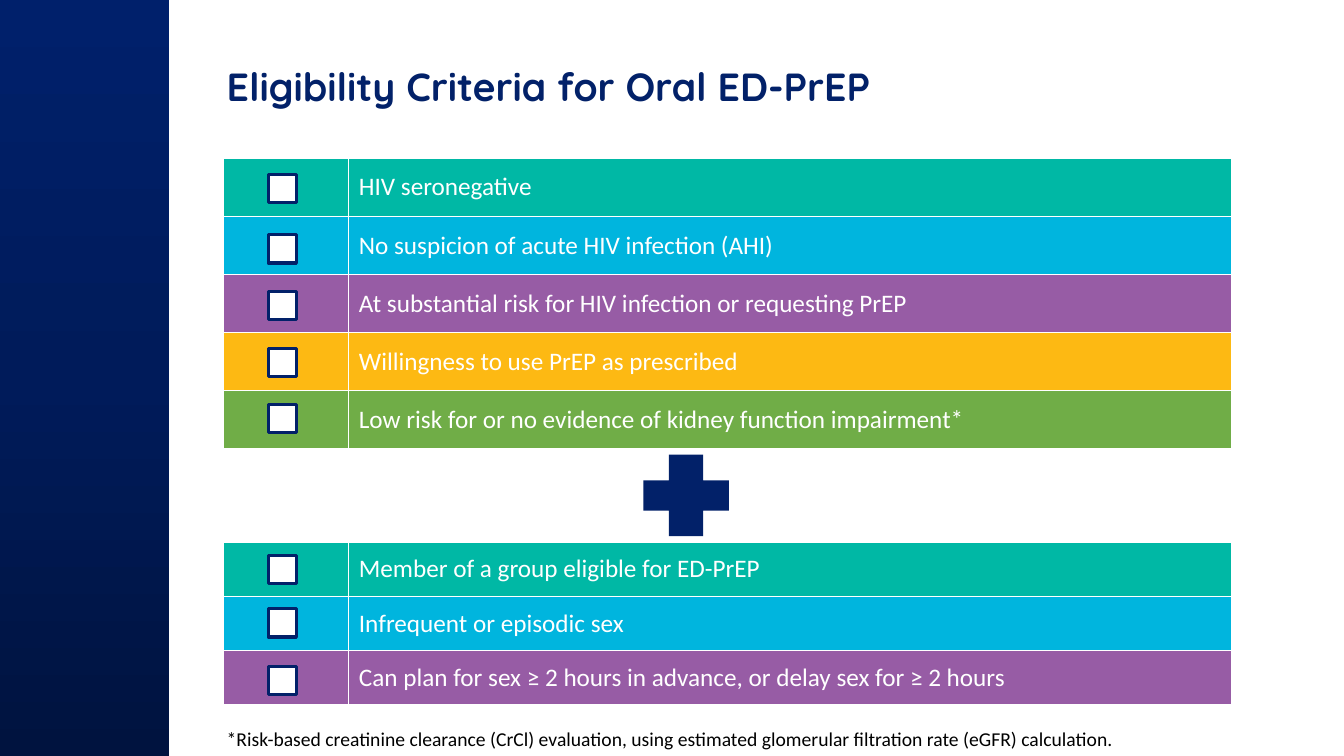
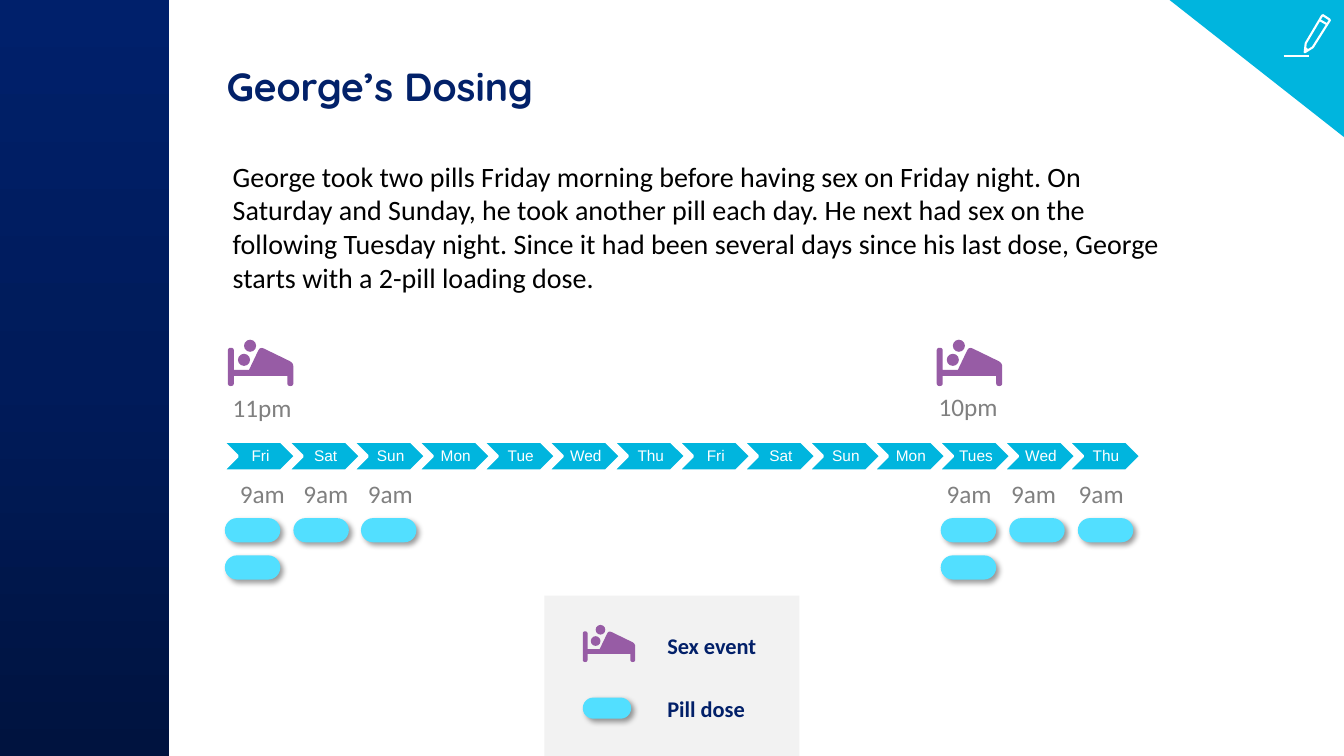
import copy
from dataclasses import dataclass

import pptx
import pptx.dml.color
import pptx.enum.shapes
import pptx.enum.text
import pptx.oxml
import pptx.oxml.ns
import pptx.util

Inches = pptx.util.Inches
Pt = pptx.util.Pt
qn = pptx.oxml.ns.qn
KIND = pptx.enum.shapes.MSO_SHAPE
ALIGN = pptx.enum.text.PP_ALIGN
ANCHOR = pptx.enum.text.MSO_ANCHOR
NS = 'xmlns:a="http://schemas.openxmlformats.org/drawingml/2006/main"'


# Theme: colours, fonts and type sizes
@dataclass(frozen=True)
class Theme:
    navy: str = "022169"
    label: str = "022069"
    white: str = "FFFFFF"
    black: str = "000000"
    gray: str = "808080"
    pale: str = "F2F2F2"
    teal: str = "00B8A5"
    blue: str = "00B5DE"
    plum: str = "975CA5"
    gold: str = "FDB913"
    green: str = "70AD47"
    pill: str = "52DFFF"
    fade: tuple = ((0, "00133F"), (0.5, "001B5A"), (1, "00206B"))
    head: str = "Quicksand"
    body: str = "Calibri"
    plain: str = "Arial"
    title: int = 28
    text: int = 20
    row: int = 18
    key: int = 16
    note: int = 14
    day: int = 11


T = Theme()


@dataclass(frozen=True)
class Box:
    x: float
    y: float
    w: float
    h: float

    def emu(self) -> tuple:
        return tuple(Inches(v) for v in (self.x, self.y, self.w, self.h))


@dataclass(frozen=True)
class Font:
    size: int
    color: str
    name: str = T.body
    bold: bool = False


@dataclass(frozen=True)
class Check:
    text: str
    tick: float  # top of the checkbox


@dataclass(frozen=True)
class Dose:
    x: float
    y: float
    pills: tuple


TITLE = Font(T.title, T.navy, T.head, True)
ROW = Font(T.row, T.white)
TIME = Font(T.row, T.gray)
KEY = Font(T.key, T.label, bold=True)
DAY = Font(T.day, T.white, T.plain)


# Shared helpers
def rgb(code: str):
    return pptx.dml.color.RGBColor.from_string(code)


def write(para, text: str, font: Font) -> None:
    run = para.add_run()
    run.text = text
    run.font.size = Pt(font.size)
    run.font.name = font.name
    run.font.bold = font.bold
    run.font.color.rgb = rgb(font.color)


def label(slide, box: Box, text: str, font: Font, wrap: bool = False) -> None:
    frame = slide.shapes.add_textbox(*box.emu()).text_frame
    frame.word_wrap = wrap
    write(frame.paragraphs[0], text, font)


def paint(shape, fill: str = "", line: str = "", width: float = 1):
    shape.shadow.inherit = False
    if fill:
        shape.fill.solid()
        shape.fill.fore_color.rgb = rgb(fill)
    else:
        shape.fill.background()
    if line:
        shape.line.color.rgb = rgb(line)
        shape.line.width = Pt(width)
    else:
        shape.line.fill.background()
    return shape


def draw(shapes, kind, box: Box, fill: str = "", line: str = "",
         width: float = 1):
    return paint(shapes.add_shape(kind, *box.emu()), fill, line, width)


def trace(shapes, points: list, close: bool):
    pairs = [(Inches(x), Inches(y)) for x, y in points]
    path = shapes.build_freeform(*pairs[0])
    path.add_line_segments(pairs[1:], close=close)
    return path.convert_to_shape()


def start(deck, title: str):
    """Add a blank slide with the side band and the title."""
    slide = deck.slides.add_slide(deck.slide_layouts[6])
    band = draw(slide.shapes, KIND.RECTANGLE, Box(0, 0, 1.68, 7.5))
    band.fill.gradient()
    band.fill.gradient_angle = 90
    stops = band._element.spPr.find(".//" + qn("a:gsLst"))
    stops.append(copy.deepcopy(stops[-1]))
    for stop, (place, color) in zip(band.fill.gradient_stops, T.fade):
        stop.position = place
        stop.color.rgb = rgb(color)
    label(slide, Box(2.15, 0.57, 10, 0.92), title, TITLE, True)
    return slide


# Checklist tables
def edge(cell) -> None:
    props = cell._tc.get_or_add_tcPr()
    for side in "LRTB":
        props.append(pptx.oxml.parse_xml(
            f'<a:ln{side} {NS} w="12700"><a:solidFill>'
            f'<a:srgbClr val="{T.white}"/></a:solidFill></a:ln{side}>'))


def checks(slide, top: float, high: float, rows: list) -> None:
    box = Box(2.22, top, 10, high * len(rows))
    table = slide.shapes.add_table(len(rows), 2, *box.emu()).table
    table.first_row = table.horz_banding = False
    for col, wide in zip(table.columns, (1.24, 8.76)):
        col.width = Inches(wide)
    fills = (T.teal, T.blue, T.plum, T.gold, T.green)
    for line, row, fill in zip(table.rows, rows, fills):
        line.height = Inches(high)
        for cell in line.cells:
            edge(cell)
            cell.fill.solid()
            cell.fill.fore_color.rgb = rgb(fill)
            cell.vertical_anchor = ANCHOR.MIDDLE
        write(line.cells[1].text_frame.paragraphs[0], row.text, ROW)
        draw(slide.shapes, KIND.RECTANGLE, Box(2.66, row.tick, 0.28, 0.28),
             T.white, T.navy, 2.25)


# Icons
def curve(corners: list) -> list:
    """Round each (x, y, radius) corner with a sampled quadratic curve."""
    points = []
    for i, (x, y, r) in enumerate(corners):
        if not r:
            points.append((x, y))
            continue
        ends = []
        for px, py, _ in (corners[i - 1], corners[(i + 1) % len(corners)]):
            part = r / ((px - x) ** 2 + (py - y) ** 2) ** 0.5
            ends.append((x + (px - x) * part, y + (py - y) * part))
        (ax, ay), (bx, by) = ends
        for t in (0, 0.25, 0.5, 0.75, 1):
            a, m, b = (1 - t) ** 2, 2 * t * (1 - t), t * t
            points.append((a * ax + m * x + b * bx, a * ay + m * y + b * by))
    return points


FRAME = [(0, 0.08, 0.03), (0.06, 0.08, 0.03), (0.06, 0.3, 0), (0.21, 0.3, 0),
         (0.32, 0.07, 0.04), (0.65, 0.23, 0.04), (0.65, 0.46, 0.03),
         (0.59, 0.46, 0.03), (0.59, 0.36, 0), (0.06, 0.36, 0),
         (0.06, 0.46, 0.03), (0, 0.46, 0.03)]


def bed(slide, x: float, y: float, scale: float = 1) -> None:
    shapes = slide.shapes.add_group_shape().shapes
    for dx, dy in ((0.1, 0.14), (0.16, 0)):
        head = Box(x + dx * scale, y + dy * scale, 0.12 * scale, 0.12 * scale)
        draw(shapes, KIND.OVAL, head, T.plum)
    points = [(x + px * scale, y + py * scale) for px, py in curve(FRAME)]
    paint(trace(shapes, points, True), T.plum)


def pencil(slide) -> None:
    shapes = slide.shapes.add_group_shape().shapes
    body = [(13.02, 0.47), (12.94, 0.52), (12.95, 0.43), (13.11, 0.16),
            (13.12, 0.15), (13.18, 0.19), (13.19, 0.2)]
    paint(trace(shapes, body, True), "", T.white, 1.5)
    for ends in ((13.09, 0.2, 13.16, 0.24), (12.95, 0.48, 12.97, 0.5),
                 (12.73, 0.56, 12.98, 0.56)):
        line = shapes.add_connector(
            pptx.enum.shapes.MSO_CONNECTOR.STRAIGHT,
            *(Inches(v) for v in ends))
        line.line.color.rgb = rgb(T.white)
        line.line.width = Pt(1.5)
        line._element.spPr.append(
            pptx.oxml.parse_xml(f"<a:effectLst {NS}/>"))


def pill(slide, box: Box) -> None:
    shape = draw(slide.shapes, KIND.ROUNDED_RECTANGLE, box, T.pill)
    shape.adjustments[0] = 0.5
    shape._element.spPr.find(qn("a:effectLst")).append(pptx.oxml.parse_xml(
        f'<a:outerShdw {NS} blurRad="{Pt(4)}" dist="{Pt(3)}" dir="2700000" '
        f'algn="tl" rotWithShape="0"><a:srgbClr val="{T.black}">'
        '<a:alpha val="40000"/></a:srgbClr></a:outerShdw>'))


# Slide 1: criteria
def rules(deck) -> None:
    slide = start(deck, "Eligibility Criteria for Oral ED-PrEP")
    checks(slide, 1.57, 0.577, [
        Check("HIV seronegative", 1.73),
        Check("No suspicion of acute HIV infection (AHI)", 2.33),
        Check("At substantial risk for HIV infection or requesting PrEP",
              2.89),
        Check("Willingness to use PrEP as prescribed", 3.46),
        Check("Low risk for or no evidence of kidney function impairment*",
              4.01)])
    plus = draw(slide.shapes, KIND.CROSS, Box(6.38, 4.51, 0.85, 0.81), T.navy)
    plus.adjustments[0] = 0.315
    checks(slide, 5.38, 0.537, [
        Check("Member of a group eligible for ED-PrEP", 5.51),
        Check("Infrequent or episodic sex", 6.04),
        Check("Can plan for sex ≥ 2 hours in advance, or delay sex for "
              "≥ 2 hours", 6.61)])
    label(slide, Box(2.15, 7.16, 10.08, 0.34),
          "*Risk-based creatinine clearance (CrCl) evaluation, using "
          "estimated glomerular filtration rate (eGFR) calculation.",
          Font(T.note, T.black), True)


# Slide 2: dosing timeline
def week(slide) -> None:
    days = "Fri Sat Sun Mon Tue Wed Thu Fri Sat Sun Mon Tues Wed Thu"
    for i, day in enumerate(days.split()):
        step = draw(slide.shapes, KIND.CHEVRON,
                    Box(2.21 + i * 0.645, 4.38, 0.72, 0.29),
                    T.blue, T.white, 2)
        frame = step.text_frame
        frame.word_wrap = False
        frame.vertical_anchor = ANCHOR.MIDDLE
        frame.margin_left = Inches(0.05)
        frame.margin_right = Inches(0.02)
        frame.margin_top = frame.margin_bottom = Inches(0.02)
        para = frame.paragraphs[0]
        para.alignment = ALIGN.CENTER
        para.line_spacing = 0.9
        write(para, day, DAY)


def dosing(deck) -> None:
    slide = start(deck, "George’s Dosing")
    label(slide, Box(2.21, 1.53, 9.55, 1.45),
          "George took two pills Friday morning before having sex on Friday "
          "night. On Saturday and Sunday, he took another pill each day. He "
          "next had sex on the following Tuesday night. Since it had been "
          "several days since his last dose, George starts with a 2-pill "
          "loading dose.", Font(T.text, T.black), True)

    # Corner flag
    flag = draw(slide.shapes, KIND.RIGHT_TRIANGLE,
                Box(11.6, 0, 1.73, 1.36), T.blue)
    flag.rotation = 180
    pencil(slide)

    # Events, days and doses
    week(slide)
    bed(slide, 2.26, 3.37)
    label(slide, Box(2.21, 3.84, 0.79, 0.4), "11pm", TIME)
    bed(slide, 9.29, 3.37)
    label(slide, Box(9.21, 3.83, 0.79, 0.4), "10pm", TIME)
    one, two = (5.14,), (5.14, 5.51)
    times = (2.28, 2.91, 3.55, 9.29, 9.93, 10.6)
    lefts = (2.23, 2.91, 3.58, 9.33, 10.01, 10.69)
    doses = [Dose(x, 4.7, two if i % 3 == 0 else one)
             for i, x in enumerate(lefts)]
    for time, dose in zip(times, doses):
        label(slide, Box(time, dose.y, 0.65, 0.4), "9am", TIME)
        for y in dose.pills:
            pill(slide, Box(dose.x, y, 0.55, 0.24))

    # Legend
    draw(slide.shapes, KIND.RECTANGLE, Box(5.4, 5.91, 2.53, 1.59), T.pale)
    bed(slide, 5.78, 6.2, 0.8)
    pill(slide, Box(5.78, 6.92, 0.48, 0.21))
    label(slide, Box(6.52, 6.22, 1.1, 0.37), "Sex event", KEY)
    label(slide, Box(6.52, 6.85, 0.98, 0.37), "Pill dose", KEY)


def main() -> None:
    deck = pptx.Presentation()
    deck.slide_width = Inches(13.33)
    deck.slide_height = Inches(7.5)
    rules(deck)
    dosing(deck)
    deck.save("out.pptx")


if __name__ == "__main__":
    main()
